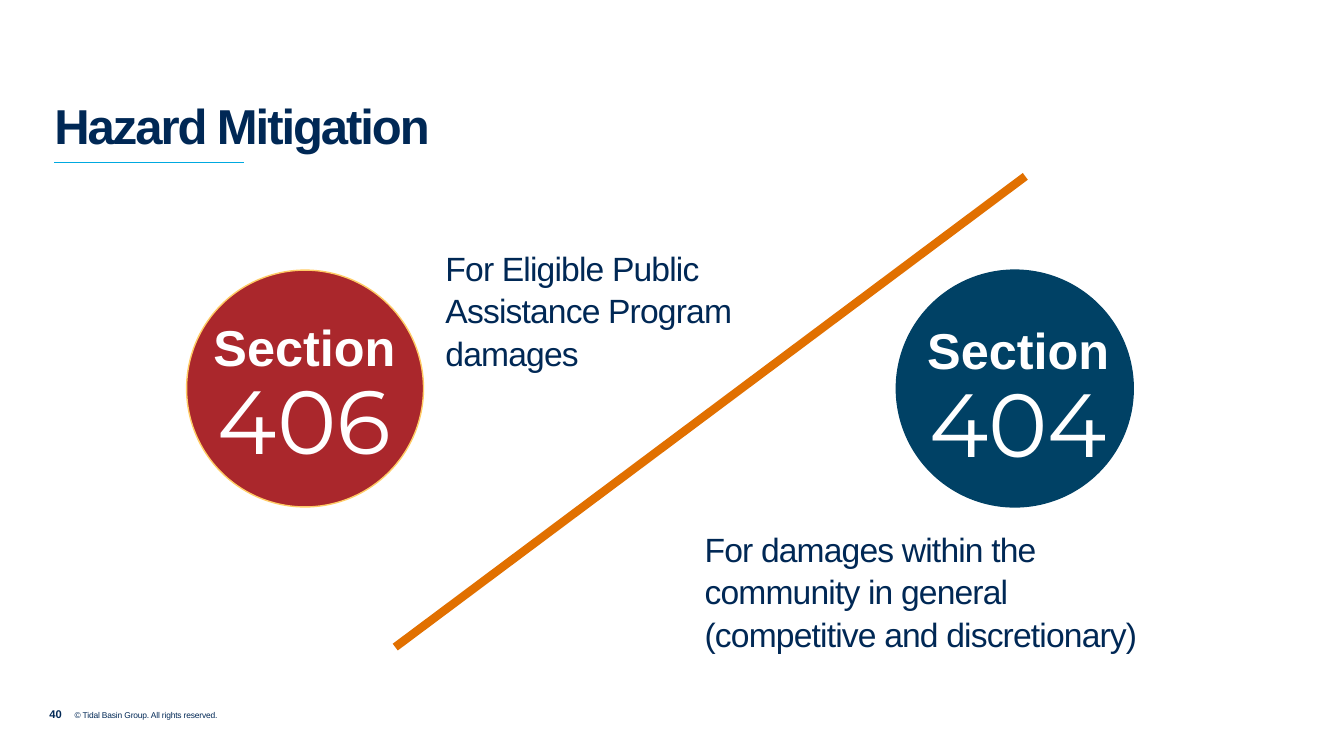
"""Builds the Hazard Mitigation slide comparing Section 406 with Section 404."""
from dataclasses import dataclass

from lxml import etree
from pptx import Presentation
from pptx.dml.color import RGBColor
from pptx.enum.shapes import MSO_CONNECTOR, MSO_SHAPE
from pptx.enum.text import MSO_ANCHOR, PP_ALIGN
from pptx.oxml.ns import qn
from pptx.slide import Slide
from pptx.util import Inches, Pt

STRAIGHT = MSO_CONNECTOR.STRAIGHT
OVAL = MSO_SHAPE.OVAL
TOP, BOTTOM = MSO_ANCHOR.TOP, MSO_ANCHOR.BOTTOM
LEFT, CENTER = PP_ALIGN.LEFT, PP_ALIGN.CENTER

WIDTH, HEIGHT = Inches(13.33), Inches(7.5)
COLORS = {
    "navy": "002855", "sky": "00A9E0", "orange": "E17000", "teal": "004165",
    "red": "AA272C", "gold": "FFCC66", "white": "FFFFFF",
}
MARGIN = (0.1, 0.05)


@dataclass(frozen=True)
class Area:
    """A rectangle in percent of the slide's width and height."""
    left: float
    top: float
    width: float
    height: float

    def emu(self) -> tuple[int, int, int, int]:
        """Returns left, top, width and height in EMU."""
        return (across(self.left), down(self.top),
                across(self.width), down(self.height))


@dataclass(frozen=True)
class Line:
    """One paragraph with its type style."""
    text: str
    size: float
    bold: bool = False
    tracking: float = 0
    font: str = "Arial"
    color: str = "navy"
    align: PP_ALIGN = LEFT
    spacing: float | Pt = 1.0
    before: float = 0


@dataclass(frozen=True)
class Block:
    """A text box holding one or more lines."""
    area: Area
    lines: tuple[Line, ...]
    margin: tuple[float, float] = (0, 0)
    anchor: MSO_ANCHOR = TOP
    wrap: bool = True


@dataclass(frozen=True)
class Rule:
    """A straight line between two points in percent of the slide."""
    start: tuple[float, float]
    end: tuple[float, float]
    color: str
    weight: float


@dataclass(frozen=True)
class Badge:
    """A round section marker with its number."""
    number: str
    left: float
    label_left: float
    label_top: float
    fill: str
    outline: str


def across(percent: float) -> int:
    """Converts a share of the slide's width to EMU."""
    return round(WIDTH * percent / 100)


def down(percent: float) -> int:
    """Converts a share of the slide's height to EMU."""
    return round(HEIGHT * percent / 100)


def rgb(name: str) -> RGBColor:
    """Looks up a named colour."""
    return RGBColor.from_string(COLORS[name])


def draw_block(slide: Slide, block: Block) -> None:
    """Adds a text box and its lines."""
    frame = slide.shapes.add_textbox(*block.area.emu()).text_frame
    frame.word_wrap = block.wrap
    frame.vertical_anchor = block.anchor
    side, edge = map(Inches, block.margin)
    frame.margin_left = frame.margin_right = side
    frame.margin_top = frame.margin_bottom = edge
    for index, line in enumerate(block.lines):
        paragraph = frame.add_paragraph() if index else frame.paragraphs[0]
        paragraph.alignment = line.align
        paragraph.line_spacing = line.spacing
        if line.before:
            paragraph.space_before = Pt(line.before)
        paragraph.font.name = line.font
        paragraph.font.size = Pt(line.size)
        paragraph.font.bold = line.bold
        paragraph.font.color.rgb = rgb(line.color)
        run = paragraph.add_run()
        run.text = line.text
        if line.tracking:
            run._r.get_or_add_rPr().set("spc", str(round(line.tracking * 100)))


def draw_rule(slide: Slide, rule: Rule) -> None:
    """Adds a straight line without shadow."""
    (x1, y1), (x2, y2) = rule.start, rule.end
    connector = slide.shapes.add_connector(
        STRAIGHT, across(x1), down(y1), across(x2), down(y2))
    connector.line.color.rgb = rgb(rule.color)
    connector.line.width = Pt(rule.weight)
    etree.SubElement(connector._element.spPr, qn("a:effectLst"))


def draw_badge(slide: Slide, badge: Badge) -> None:
    """Adds a disc with its section label."""
    disc = slide.shapes.add_shape(
        OVAL, *Area(badge.left, 35.73, 17.63, 31.33).emu())
    disc.shadow.inherit = False
    disc.fill.solid()
    disc.fill.fore_color.rgb = rgb(badge.fill)
    disc.line.color.rgb = rgb(badge.outline)
    disc.line.width = Pt(1)
    draw_block(slide, Block(
        Area(badge.label_left, badge.label_top, 15.15, 22.53),
        (Line("Section", 36, bold=True, color="white", align=CENTER, spacing=1.05),
         Line(badge.number, 64, font="Montserrat", color="white", align=CENTER,
              spacing=Pt(65), before=3)),
        MARGIN))


def body(text: str) -> Line:
    """Returns a line in the description style."""
    return Line(text, 24, tracking=-0.6, spacing=1.05)


RULES = (
    Rule((4.05, 21.47), (18.15, 21.47), "sky", 0.75),
    Rule((76.29, 23.33), (29.41, 85.6), "orange", 6),
)
BADGES = (
    Badge("406", 13.88, 15.08, 40.8, "red", "gold"),
    Badge("404", 66.69, 68.19, 41.2, "teal", "teal"),
)
BLOCKS = (
    Block(Area(4.05, 12.27, 77.27, 8.13),
          (Line("Hazard Mitigation", 35, bold=True, tracking=-1.5),),
          anchor=BOTTOM),
    Block(Area(32.41, 31.87, 23.63, 17.47),
          tuple(map(body, ("For Eligible Public", "Assistance Program", "damages"))),
          MARGIN, wrap=False),
    Block(Area(51.69, 69.07, 35.26, 17.47),
          (body("For damages within the community in general "
                "(competitive and discretionary)"),),
          MARGIN),
    Block(Area(3.68, 93.6, 1.8, 6), (Line("40", 8, bold=True),)),
    Block(Area(5.55, 93.87, 20.86, 6),
          (Line("© Tidal Basin Group. All rights reserved.", 6, tracking=-0.1),)),
)


def main() -> None:
    """Builds and saves the slide."""
    deck = Presentation()
    deck.slide_width, deck.slide_height = WIDTH, HEIGHT
    slide = deck.slides.add_slide(deck.slide_layouts[6])
    for rule in RULES:
        draw_rule(slide, rule)
    for badge in BADGES:
        draw_badge(slide, badge)
    for block in BLOCKS:
        draw_block(slide, block)
    deck.save("out.pptx")


if __name__ == "__main__":
    main()
